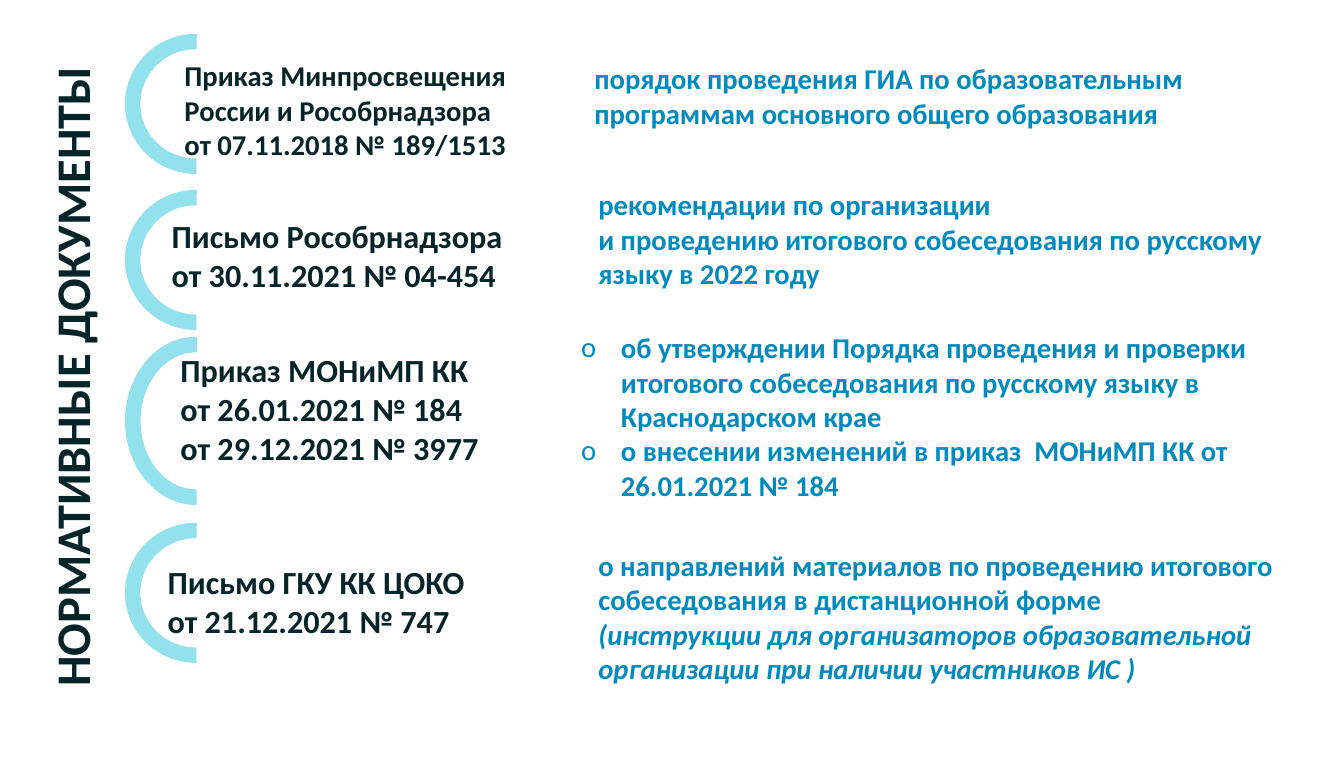
from lxml.etree import SubElement
from pptx import Presentation
from pptx.dml.color import RGBColor
from pptx.enum.shapes import MSO_SHAPE as SHAPE
from pptx.enum.text import MSO_ANCHOR as ANCHOR, MSO_AUTO_SIZE as AUTO, PP_ALIGN as ALIGN
from pptx.oxml.ns import qn
from pptx.util import Inches, Pt

FONT, DARK, BLUE, AQUA = "Calibri", "052427", "018ABE", "93E1ED"

prs = Presentation()
prs.slide_width, prs.slide_height = Inches(20.87), Inches(11.81)
# Grid of 100 columns by 100 rows
COL, ROW = prs.slide_width / 100, prs.slide_height / 100

# Each document: row top and height, label (dx, dy, w, h), label size and lines,
# details (dx, dy, w, h) and paragraphs, with offsets from the row's corner
ROW_LEFT, ARC_WIDTH = 9.3, 10.54
DOCUMENTS = [
    (4.45, 18.4, (3.95, 2.8, 38.2, 14.6), 32,
     ["Приказ Минпросвещения", "России и Рособрнадзора", "от 07.11.2018 № 189/1513"],
     (34.45, 3.15, 53.4, 10),
     ["порядок проведения ГИА по образовательным программам основного общего образования"]),
    (24.95, 18.4, (3, 3.1, 38.2, 11.1), 36,
     ["Письмо Рособрнадзора", "от 30.11.2021 № 04-454"],
     (34.75, -0.75, 52.85, 14.6),
     ["рекомендации по организации",
      "и проведению итогового собеседования по русскому языку в 2022 году"]),
    (44.25, 22.1, (3.65, 1.4, 38.8, 22.5), 36,
     ["Приказ МОНиМП КК", "от 26.01.2021 № 184", "от 29.12.2021 № 3977"],
     (33.45, -1.3, 54.1, 23.6),
     ["об утверждении Порядка проведения и проверки итогового собеседования "
      "по русскому языку в Краснодарском крае",
      "о внесении изменений в приказ  МОНиМП КК от 26.01.2021 № 184"]),
    (68.7, 18.4, (2.7, 4.8, 30.8, 17.4), 36,
     ["Письмо ГКУ КК ЦОКО", "от 21.12.2021 № 747"],
     (34.75, 2.85, 54.4, 19.1),
     ["о направлений материалов по проведению итогового собеседования в дистанционной форме",
      "(инструкции для организаторов образовательной организации при наличии участников ИС )"]),
]
LISTED, ITALIC = 2, (3, 1)  # row with bullets; row and paragraph in italics


def rgb(value):
    return RGBColor.from_string(value)


def place(sp, box, turned=False):
    """Put a shape into a grid box; a turned one is rotated by 270 degrees."""
    x, y, w, h = box[0] * COL, box[1] * ROW, box[2] * COL, box[3] * ROW
    if turned:
        x, y, w, h = x + (w - h) / 2, y + (h - w) / 2, h, w
        sp.rotation = 270
    sp.left, sp.top, sp.width, sp.height = int(x), int(y), int(w), int(h)


def write(sp, lines, size, color, align=ALIGN.LEFT):
    tf = sp.text_frame
    tf.text = "\n".join(lines)
    tf.word_wrap = True
    tf.auto_size = AUTO.NONE
    tf.vertical_anchor = ANCHOR.TOP
    for p in tf.paragraphs:
        p.alignment = align
        p.space_before = Pt(0)
        for r in p.runs:
            r.font.name, r.font.size, r.font.bold = FONT, Pt(size), True
            r.font.color.rgb = rgb(color)


def add_bullets(sp):
    for p in sp.text_frame.paragraphs:
        ppr = p._p.get_or_add_pPr()
        ppr.set("marL", str(Inches(0.62)))
        ppr.set("indent", str(-Inches(0.62)))
        SubElement(ppr, qn("a:buFont")).set("typeface", FONT)
        SubElement(ppr, qn("a:buChar")).set("char", "o")


def add_heading(slide, box):
    title = slide.shapes.title
    place(title, box, turned=True)
    write(title, ["НОРМАТИВНЫЕ ДОКУМЕНТЫ"], 54, DARK, ALIGN.CENTER)


def add_arc(slide, box):
    arc = slide.shapes.add_shape(SHAPE.BLOCK_ARC, 0, 0, 0, 0)
    place(arc, box, turned=True)
    for i, value in enumerate((107.65, 0.49, 0.11)):
        arc.adjustments[i] = value
    arc.shadow.inherit = False
    arc.fill.solid()
    arc.fill.fore_color.rgb = rgb(AQUA)
    arc.line.fill.background()


def add_document(slide, box, label_box, size, label, detail_box, details, listed):
    left, top = box[:2]
    add_arc(slide, box)
    # Name and number of the document
    sp = slide.shapes.add_textbox(0, 0, 0, 0)
    place(sp, (left + label_box[0], top + label_box[1], *label_box[2:]))
    write(sp, label, size, DARK)
    # What it is about
    sp = slide.placeholders[1] if listed else slide.shapes.add_textbox(0, 0, 0, 0)
    place(sp, (left + detail_box[0], top + detail_box[1], *detail_box[2:]))
    write(sp, details, 32, BLUE)
    if listed:
        add_bullets(sp)
    return sp


def build_slide():
    slide = prs.slides.add_slide(prs.slide_layouts[1])
    add_heading(slide, (2.92, 0, 4.84, 99))
    for i, (top, height, *parts) in enumerate(DOCUMENTS):
        box = (ROW_LEFT, top, ARC_WIDTH, height)
        sp = add_document(slide, box, *parts, listed=i == LISTED)
        if i == ITALIC[0]:
            sp.text_frame.paragraphs[ITALIC[1]].runs[0].font.italic = True


if __name__ == "__main__":
    build_slide()
    prs.save("out.pptx")
